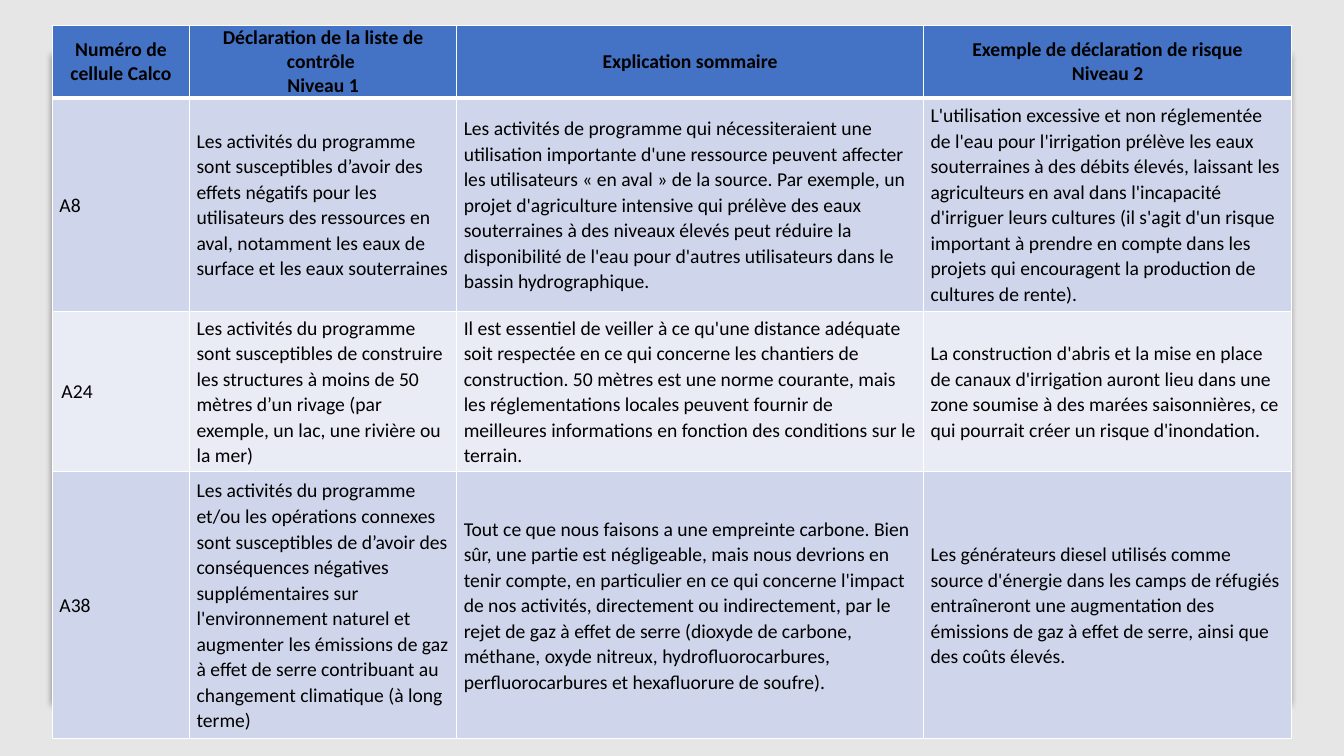
from dataclasses import dataclass

from lxml import etree
from pptx import Presentation
from pptx import util as u
from pptx.dml.color import RGBColor
from pptx.enum import shapes, text
from pptx.oxml import ns

PX = 9144


@dataclass(frozen=True)
class Theme:
    font: str = "Calibri"
    size: int = 14
    ink: str = "000000"
    backdrop: str = "E7E6E6"
    panel: str = "FFFFFF"
    header: str = "4472C4"
    band_dark: str = "CFD5EA"
    band_light: str = "E9EBF5"
    border: str = "FFFFFF"
    thin: int = 1
    thick: int = 3


@dataclass(frozen=True)
class Box:
    x: int
    y: int
    w: int
    h: int

    def emu(self) -> list[int]:
        return [v * PX for v in (self.x, self.y, self.w, self.h)]


@dataclass(frozen=True)
class Cell:
    words: str
    after: int = 0
    spacing: float = 1.07
    side: int = 7
    edge: int = 0


@dataclass(frozen=True)
class Row:
    height: int
    fill: str
    cells: tuple[Cell, ...]
    header: bool = False


THEME = Theme()
BACKDROP = Box(0, 0, 1333, 750)
PANEL = Box(52, 53, 1229, 645)
TABLE = Box(52, 25, 1229, 708)
COLUMNS = (136, 265, 463, 365)

ROWS = (
    Row(72, THEME.header, (
        Cell("Numéro de cellule Calco", spacing=1),
        Cell("Déclaration de la liste de contrôle \nNiveau 1", spacing=1),
        Cell("Explication sommaire", spacing=1),
        Cell("Exemple de déclaration de risque\nNiveau 2", spacing=1),
    ), header=True),
    Row(212, THEME.band_dark, (
        Cell("A8"),
        Cell("Les activités du programme sont susceptibles d’avoir des effets négatifs pour les "
             "utilisateurs des ressources en aval, notamment les eaux de surface et les eaux "
             "souterraines"),
        Cell("Les activités de programme qui nécessiteraient une utilisation importante d'une "
             "ressource peuvent affecter les utilisateurs « en aval » de la source. Par exemple, "
             "un projet d'agriculture intensive qui prélève des eaux souterraines à des niveaux "
             "élevés peut réduire la disponibilité de l'eau pour d'autres utilisateurs dans le "
             "bassin hydrographique."),
        Cell("L'utilisation excessive et non réglementée de l'eau pour l'irrigation prélève les "
             "eaux souterraines à des débits élevés, laissant les agriculteurs en aval dans "
             "l'incapacité d'irriguer leurs cultures (il s'agit d'un risque important à prendre "
             "en compte dans les projets qui encouragent la production de cultures de rente)."),
    )),
    Row(159, THEME.band_light, (
        Cell("A24", spacing=1, side=9, edge=4),
        Cell("Les activités du programme sont susceptibles de construire les structures à moins "
             "de 50 mètres d’un rivage (par exemple, un lac, une rivière ou la mer)", after=8),
        Cell("Il est essentiel de veiller à ce qu'une distance adéquate soit respectée en ce qui "
             "concerne les chantiers de construction. 50 mètres est une norme courante, mais les "
             "réglementations locales peuvent fournir de meilleures informations en fonction des "
             "conditions sur le terrain."),
        Cell("La construction d'abris et la mise en place de canaux d'irrigation auront lieu dans "
             "une zone soumise à des marées saisonnières, ce qui pourrait créer un risque "
             "d'inondation."),
    )),
    Row(265, THEME.band_dark, (
        Cell("A38"),
        Cell("Les activités du programme et/ou les opérations connexes sont susceptibles de "
             "d’avoir des conséquences négatives supplémentaires sur l'environnement naturel et "
             "augmenter les émissions de gaz à effet de serre contribuant au changement "
             "climatique (à long terme)", after=8),
        Cell("Tout ce que nous faisons a une empreinte carbone. Bien sûr, une partie est "
             "négligeable, mais nous devrions en tenir compte, en particulier en ce qui concerne "
             "l'impact de nos activités, directement ou indirectement, par le rejet de gaz à effet "
             "de serre (dioxyde de carbone, méthane, oxyde nitreux, hydrofluorocarbures, "
             "perfluorocarbures et hexafluorure de soufre)."),
        Cell("Les générateurs diesel utilisés comme source d'énergie dans les camps de réfugiés "
             "entraîneront une augmentation des émissions de gaz à effet de serre, ainsi que des "
             "coûts élevés.", after=8),
    )),
)


def add_color(parent, color: str):
    return etree.SubElement(parent, ns.qn("a:srgbClr"), val=color)


def add_rect(s, box: Box, color: str):
    sp = s.shapes.add_shape(shapes.MSO_SHAPE.RECTANGLE, *box.emu())
    sp.shadow.inherit = False
    sp.fill.solid()
    sp.fill.fore_color.rgb = RGBColor.from_string(color)
    sp.line.fill.background()
    return sp


def add_shadow(sp) -> None:
    effects = sp._element.spPr.find(ns.qn("a:effectLst"))
    shadow = etree.SubElement(effects, ns.qn("a:outerShdw"), blurRad=str(u.Pt(5)),
                              dist=str(u.Pt(1.4)), dir="5400000", algn="t", rotWithShape="0")
    etree.SubElement(add_color(shadow, THEME.ink), ns.qn("a:alpha"), val="43000")


def add_borders(cell, top: int, bottom: int) -> None:
    tcPr = cell._tc.get_or_add_tcPr()
    widths = {"L": THEME.thin, "R": THEME.thin, "T": top, "B": bottom}
    for side, width in widths.items():
        ln = etree.SubElement(tcPr, ns.qn(f"a:ln{side}"), w=str(u.Pt(width)))
        add_color(etree.SubElement(ln, ns.qn("a:solidFill")), THEME.border)


def fill_cell(cell, data: Cell, row: Row, top: int, bottom: int) -> None:
    add_borders(cell, top, bottom)
    cell.fill.solid()
    cell.fill.fore_color.rgb = RGBColor.from_string(row.fill)
    cell.vertical_anchor = text.MSO_ANCHOR.MIDDLE
    cell.margin_left = cell.margin_right = data.side * PX
    cell.margin_top = cell.margin_bottom = data.edge * PX
    tf = cell.text_frame
    tf.text = data.words
    for p in tf.paragraphs:
        p.alignment = text.PP_ALIGN.CENTER if row.header else text.PP_ALIGN.LEFT
        p.line_spacing = data.spacing
        p.space_after = u.Pt(data.after)
        for r in p.runs:
            r.font.name = THEME.font
            r.font.size = u.Pt(THEME.size)
            r.font.bold = row.header
            r.font.color.rgb = RGBColor.from_string(THEME.ink)


def add_risk_table(s) -> None:
    table = s.shapes.add_table(len(ROWS), len(COLUMNS), *TABLE.emu()).table
    for column, width in zip(table.columns, COLUMNS):
        column.width = width * PX
    top = THEME.thin
    for i, row in enumerate(ROWS):
        table.rows[i].height = row.height * PX
        bottom = THEME.thick if row.header else THEME.thin
        for j, data in enumerate(row.cells):
            fill_cell(table.cell(i, j), data, row, top, bottom)
        top = bottom


def main() -> None:
    prs = Presentation()
    prs.slide_width = BACKDROP.w * PX
    prs.slide_height = BACKDROP.h * PX
    s = prs.slides.add_slide(prs.slide_layouts[6])
    add_rect(s, BACKDROP, THEME.backdrop)
    add_shadow(add_rect(s, PANEL, THEME.panel))
    add_risk_table(s)
    prs.save("out.pptx")


if __name__ == "__main__":
    main()
